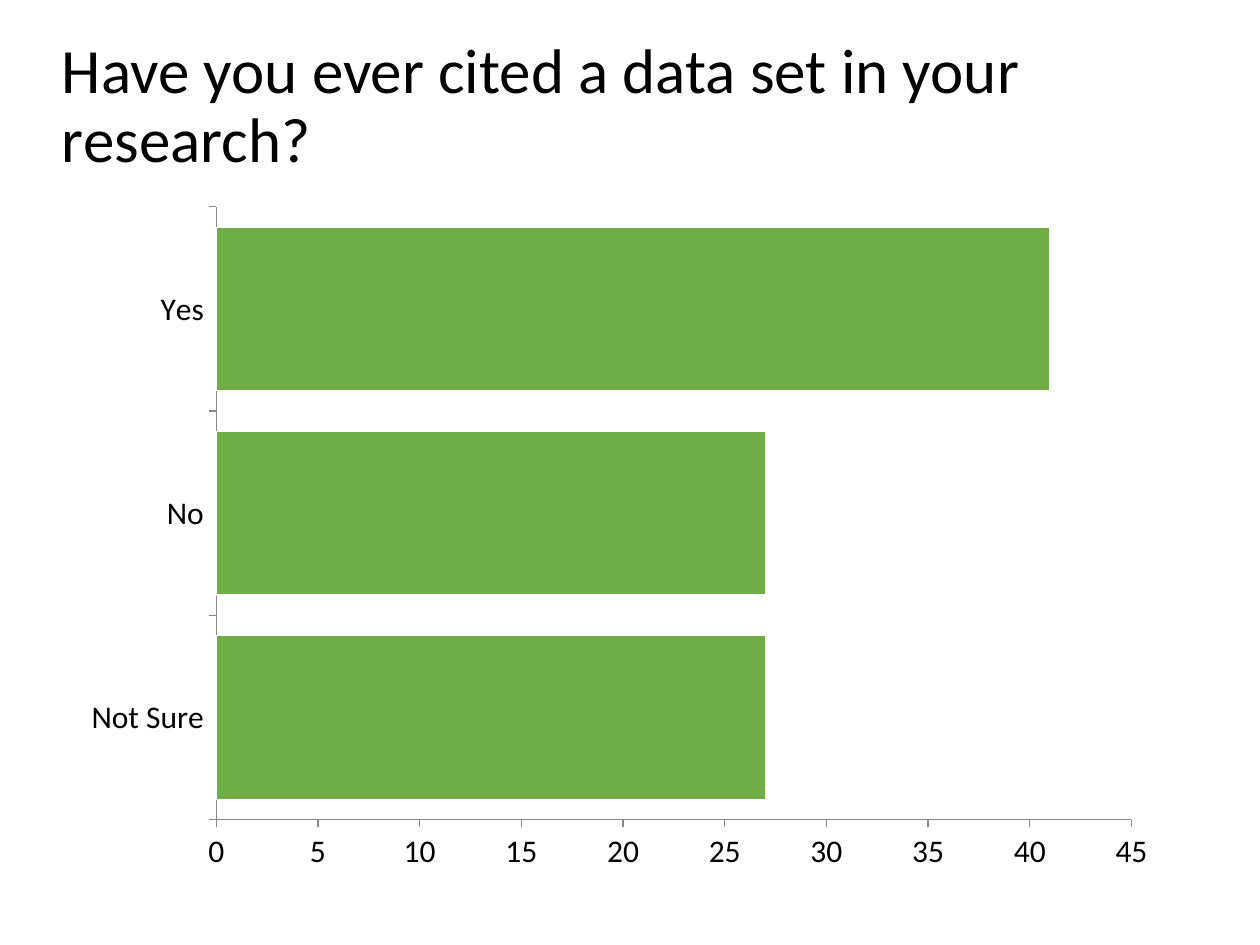
from lxml.etree import SubElement
from pptx import Presentation
from pptx.chart.data import CategoryChartData
from pptx.dml.color import RGBColor
from pptx.enum.chart import XL_CHART_TYPE, XL_TICK_MARK
from pptx.enum.shapes import MSO_SHAPE
from pptx.enum.text import MSO_ANCHOR, PP_ALIGN
from pptx.oxml.ns import qn
from pptx.util import Cm, Pt

FONT = "Calibri"
BLACK, WHITE, GREEN, GREY = "000000", "FFFFFF", "70AD47", "898989"


def rgb(value):
    return RGBColor.from_string(value)


def set_font(font, size, color):
    font.name = FONT
    font.size = Pt(size)
    font.color.rgb = rgb(color)


def add_text(s, text, x, y, w, h, *, size=18, color=BLACK, spacing=1.0):
    """Add an unfilled box holding left-aligned, vertically centred text."""
    sp = s.shapes.add_shape(MSO_SHAPE.ROUNDED_RECTANGLE, Cm(x), Cm(y), Cm(w), Cm(h))
    sp.adjustments[0] = 0
    sp.shadow.inherit = False
    sp.fill.background()
    sp.line.fill.background()
    tf = sp.text_frame
    tf.word_wrap = True
    tf.vertical_anchor = MSO_ANCHOR.MIDDLE
    tf.margin_left = tf.margin_right = tf.margin_top = tf.margin_bottom = 0
    p = tf.paragraphs[0]
    p.alignment = PP_ALIGN.LEFT
    p.line_spacing = spacing
    r = p.add_run()
    r.text = text
    set_font(r.font, size, color)
    return sp


def set_plot_area(chart, **fractions):
    """Fix the inner plot area as fractions of the chart frame."""
    plot_area = chart._chartSpace.chart.plotArea
    layout = plot_area.find(qn("c:layout"))
    if layout is None:
        layout = SubElement(plot_area, qn("c:layout"))
        plot_area.insert(0, layout)
    manual = SubElement(layout, qn("c:manualLayout"))
    settings = {"layoutTarget": "inner", "xMode": "edge", "yMode": "edge", **fractions}
    for tag, value in settings.items():
        SubElement(manual, qn(f"c:{tag}")).set("val", str(value))


def style_axis(axis):
    axis.has_major_gridlines = False
    axis.major_tick_mark = XL_TICK_MARK.OUTSIDE
    axis.minor_tick_mark = XL_TICK_MARK.NONE
    axis.format.line.color.rgb = rgb(GREY)
    axis.format.line.width = Pt(0.75)


def add_bar_chart(s, answers, x, y, w, h):
    data = CategoryChartData()
    data.categories = list(answers)
    data.add_series("Series 1", list(answers.values()))
    chart = s.shapes.add_chart(
        XL_CHART_TYPE.BAR_CLUSTERED, Cm(x), Cm(y), Cm(w), Cm(h), data
    ).chart
    chart.has_title = False
    chart.has_legend = False
    set_font(chart.font, 18, BLACK)
    set_plot_area(chart, x=0.13, y=0.02, w=0.83, h=0.89)

    # Bars
    plot = chart.plots[0]
    plot.gap_width = 25
    plot.vary_by_categories = False
    bars = plot.series[0].format
    bars.fill.solid()
    bars.fill.fore_color.rgb = rgb(GREEN)
    bars.line.color.rgb = rgb(WHITE)
    bars.line.width = Pt(0.75)

    # Axes
    for axis in (chart.category_axis, chart.value_axis):
        style_axis(axis)
    chart.value_axis.minimum_scale = 0
    chart.value_axis.maximum_scale = 45
    chart.value_axis.major_unit = 5
    return chart


def main():
    prs = Presentation()
    prs.slide_width, prs.slide_height = Cm(25.4), Cm(19.05)
    s = prs.slides.add_slide(prs.slide_layouts[6])

    # Question
    add_text(s, "Have you ever cited a data set in your research?",
             1.25, 0.86, 24.15, 2.62, size=36, spacing=0.9)

    # Answers, from the bottom bar up
    add_bar_chart(s, {"Not Sure": 27, "No": 27, "Yes": 41}, 1.47, 3.89, 22.23, 13.89)

    prs.save("out.pptx")


if __name__ == "__main__":
    main()
